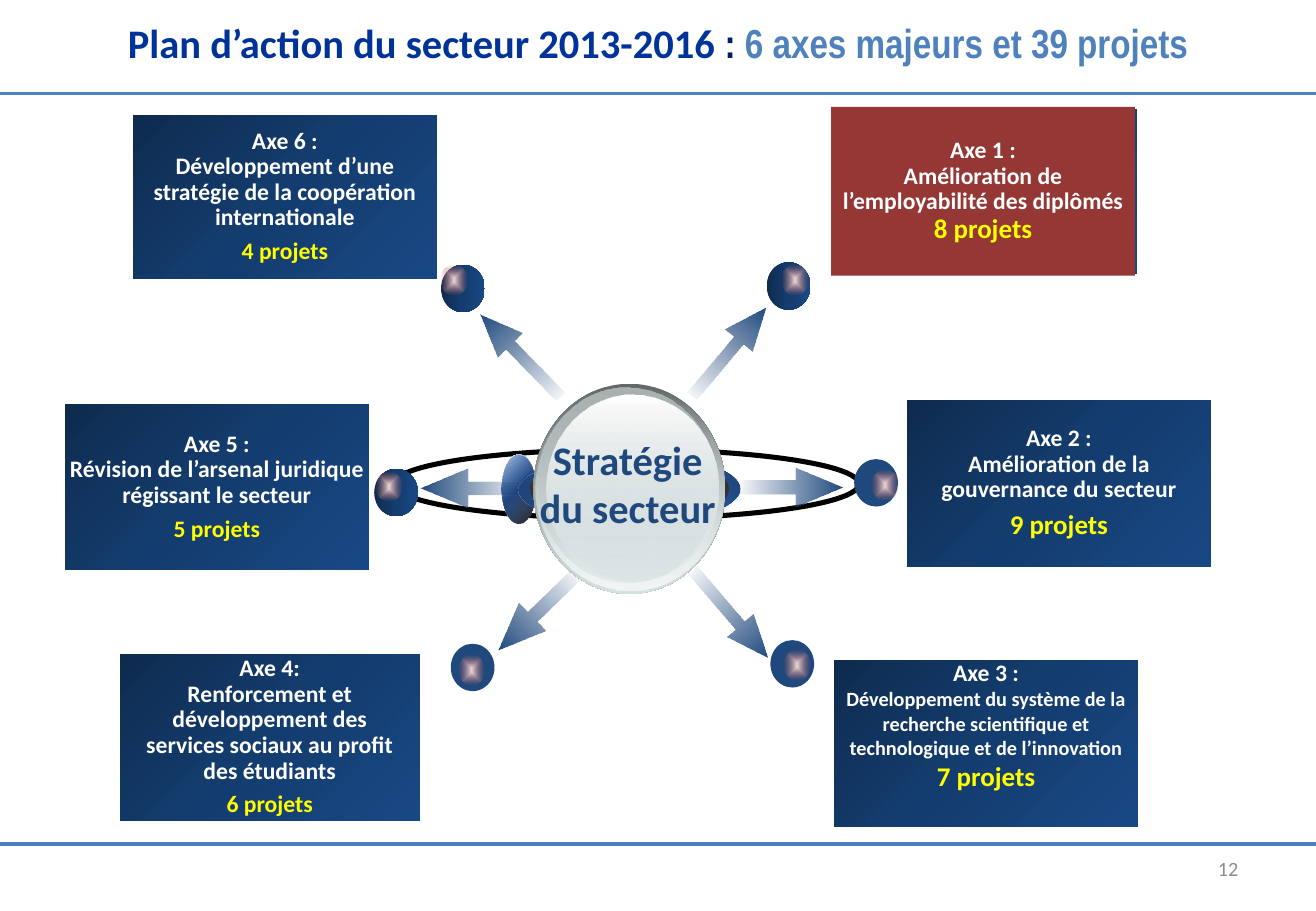
from lxml import etree
from pptx import Presentation
from pptx.dml.color import RGBColor
from pptx.enum import shapes, text
from pptx.oxml.ns import qn
from pptx.util import Inches, Pt

WHITE = RGBColor(0xFF, 0xFF, 0xFF)
BLACK = RGBColor(0, 0, 0)
YELLOW = RGBColor(0xFF, 0xFF, 0)
RED = RGBColor(0x95, 0x37, 0x35)
BLUE = RGBColor(0x4F, 0x81, 0xBD)
ROYAL = RGBColor(0, 0x33, 0x99)
NAVY = RGBColor(0, 0x20, 0x60)
INK = RGBColor(0x1F, 0x49, 0x7D)
FADE = RGBColor(0x1D, 0x45, 0x77)
DEEP = RGBColor(0x0E, 0x2B, 0x4E)
MID = RGBColor(0x14, 0x3D, 0x6F)
LIGHT = RGBColor(0x18, 0x48, 0x84)
SHINE = RGBColor(0xEC, 0xD8, 0xD8)
ROSE = RGBColor(0xC0, 0x50, 0x4D)
SKY = RGBColor(0x30, 0x67, 0xB8)
DUSK = RGBColor(0x1A, 0x38, 0x64)
STEEL = RGBColor(0x1F, 0x41, 0x75)
COAL = RGBColor(0x33, 0x33, 0x33)
SLATE = RGBColor(0x63, 0x68, 0x69)
MIST = RGBColor(0xD6, 0xE1, 0xE2)
PALE = RGBColor(0xF1, 0xF5, 0xF5)
ASH = RGBColor(0xAA, 0xB2, 0xB3)
GREY = RGBColor(0x8C, 0x8C, 0x8C)

# Gradient stops: position, colour, opacity
PANEL = [(0, DEEP, 100), (50, MID, 100), (100, LIGHT, 100)]
GLOW = [(0, SHINE, 100), (100, ROSE, 0)]
TAIL = [(0, FADE, 0), (100, INK, 100)]

RECT, OVAL, ARROW = (shapes.MSO_SHAPE.RECTANGLE, shapes.MSO_SHAPE.OVAL,
                     shapes.MSO_SHAPE.RIGHT_ARROW)
MIDDLE, TOP = text.MSO_ANCHOR.MIDDLE, text.MSO_ANCHOR.TOP
CENTER, RIGHT = text.PP_ALIGN.CENTER, text.PP_ALIGN.RIGHT

# Position, size, lines, size of the count, margin, anchor
AXES = [
    (6.84, 0.88, 2.5, 1.39, ["Axe 1 :", "Amélioration de l’employabilité des diplômés",
                             "8 projets"], 16, 0.01, MIDDLE),
    (7.45, 3.28, 2.53, 1.4, ["Axe 2 :", "Amélioration de la gouvernance du secteur",
                             "9 projets"], 16, 0.01, MIDDLE),
    (6.85, 5.42, 2.53, 1.4, ["Axe 3 :", "Développement du système de la recherche "
                             "scientifique et technologique et de l’innovation",
                             "7 projets"], 16, 0.08, TOP),
    (0.97, 5.37, 2.5, 1.4, ["Axe 4:", "Renforcement et développement des services "
                            "sociaux au profit des étudiants",
                            "6 projets"], 14, 0.15, MIDDLE),
    (0.52, 3.31, 2.53, 1.4, ["Axe 5 :", "Révision de l’arsenal juridique régissant "
                             "le secteur", "5 projets"], 14, 0.01, MIDDLE),
    (1.08, 0.93, 2.53, 1.38, ["Axe 6 :", "Développement d’une stratégie de la "
                              "coopération internationale", "4 projets"], 14, 0.01, MIDDLE),
]

# Layers of the central globe: box, fill, angle
GLOBE = [
    ((4.13, 3.74, 0.28, 0.57), [(0, WHITE, 100), (50, SKY, 100), (100, WHITE, 100)], 45),
    ((4.13, 3.74, 0.28, 0.57), [(0, SKY, 32), (100, BLACK, 90)], 45),
    ((4.27, 3.74, 1.82, 0.57), [(0, DUSK, 100), (50, SKY, 100), (100, DUSK, 100)], 315),
    ((4.27, 3.75, 1.82, 0.57), [(0, STEEL, 100), (100, SKY, 0)], 45),
    ((4.36, 3.74, 1.64, 0.57), COAL, 0),
    ((4.39, 3.16, 1.58, 1.73), [(0, SLATE, 100), (100, MIST, 100)], 90),
    ((4.41, 3.17, 1.55, 1.69), [(0, MIST, 0), (100, PALE, 100)], 90),
    ((4.42, 3.19, 1.48, 1.61), [(0, ASH, 100), (100, MIST, 48)], 90),
    ((4.5, 3.25, 1.41, 1.54), [(0, WHITE, 100), (100, MIST, 38)], 90),
]

# Box and rotation
ARROWS = [
    ((3.46, 3.86, 0.87, 0.32), 180), ((6.06, 3.85, 0.87, 0.32), 0),
    ((5.53, 2.75, 0.94, 0.29), 309.6), ((3.81, 2.78, 0.94, 0.29), 225.5),
    ((5.54, 4.91, 0.94, 0.29), 49), ((3.98, 4.88, 0.87, 0.32), 135.7),
]

# Ball corner, fill, offset of its highlight
BALLS = [
    (6.31, 2.16, PANEL, 0.12, 0.02), (3.63, 2.18, PANEL, 0, 0),
    (3.08, 3.86, PANEL, 0.01, 0.02), (7.03, 3.78, INK, 0.14, 0.09),
    (6.34, 5.27, INK, 0.11, 0.08), (3.71, 5.3, INK, 0.06, 0.09),
]


def blend(shape, stops, angle):
    """Fill with a gradient; an angle of None runs it from the centre."""
    shape.fill.gradient()
    grad = shape._element.spPr.find(qn("a:gradFill"))
    grad.clear()
    grad.set("rotWithShape", "1")
    group = etree.SubElement(grad, qn("a:gsLst"))
    for pos, color, alpha in stops:
        stop = etree.SubElement(group, qn("a:gs"), pos=str(pos * 1000))
        tint = etree.SubElement(stop, qn("a:srgbClr"), val=str(color))
        if alpha < 100:
            etree.SubElement(tint, qn("a:alpha"), val=str(alpha * 1000))
    if angle is None:
        way = etree.SubElement(grad, qn("a:path"), path="shape")
        etree.SubElement(way, qn("a:fillToRect"), l="50000", t="50000",
                         r="50000", b="50000")
    else:
        etree.SubElement(grad, qn("a:lin"), ang=str(angle * 60000), scaled="0")


def draw(slide, kind, box, fill=None, angle=0, line=None, width=2):
    shape = slide.shapes.add_shape(kind, *map(Inches, box))
    shape.shadow.inherit = False
    if fill is None:
        shape.fill.background()
    elif isinstance(fill, list):
        blend(shape, fill, angle)
    else:
        shape.fill.solid()
        shape.fill.fore_color.rgb = fill
    if line is None:
        shape.line.fill.background()
    else:
        shape.line.color.rgb = line
        shape.line.width = Pt(width)
    return shape


def style(font, size, color, bold=True, name="Calibri"):
    font.name, font.size, font.bold = name, Pt(size), bold
    font.color.rgb = color


def write(frame, lines, align=CENTER):
    """Put one paragraph per (words, size, colour, bold)."""
    frame.word_wrap = True
    for i, (words, *look) in enumerate(lines):
        para = frame.add_paragraph() if i else frame.paragraphs[0]
        para.text, para.alignment = words, align
        style(para.font, *look)


def label(slide, box, lines, align=CENTER, anchor=TOP):
    frame = slide.shapes.add_textbox(*map(Inches, box)).text_frame
    frame.vertical_anchor = anchor
    write(frame, lines, align)


def rule(slide, y):
    line = slide.shapes.add_connector(shapes.MSO_CONNECTOR.STRAIGHT, 0, Inches(y),
                                      Inches(10.83), Inches(y))
    line.line.color.rgb = BLUE
    line.line.width = Pt(2.25)
    etree.SubElement(line._element.spPr, qn("a:effectLst"))


def head(slide):
    title = slide.shapes.title
    title.left, title.top, title.width, title.height = map(Inches, (0, 0.15, 10.83, 0.45))
    frame = title.text_frame
    frame.auto_size = text.MSO_AUTO_SIZE.NONE
    frame.vertical_anchor = MIDDLE
    para = frame.paragraphs[0]
    para.alignment, para.line_spacing = CENTER, Pt(25)
    for words, color, name in [("Plan d’action du secteur 2013-2016 ", ROYAL, "Calibri"),
                               (": ", NAVY, "Arial Narrow"),
                               ("6 axes majeurs et 39 projets", BLUE, "Arial Narrow")]:
        run = para.add_run()
        run.text = words
        style(run.font, 24, color, name=name)


def axis(slide, x, y, w, h, lines, size, margin, anchor):
    first, low = lines[0] == "Axe 1 :", anchor == TOP
    if first:
        draw(slide, RECT, (x, y, 2.53, h), PANEL, 45, WHITE)
        card = draw(slide, RECT, (x, y, w, h), RED)
    else:
        card = draw(slide, RECT, (x, y, w, h), PANEL, 45, WHITE)
    frame = card.text_frame
    frame.margin_left = frame.margin_right = Inches(margin)
    frame.margin_top = frame.margin_bottom = Inches(0 if low else 0.01)
    frame.vertical_anchor = anchor
    sizes = (14, 12 if low else 14, size)
    write(frame, [(words, pts, color, True) for words, pts, color
                  in zip(lines, sizes, (WHITE, WHITE, YELLOW))])
    if not low:
        for para in frame.paragraphs:
            para.line_spacing = 0.9
        for para in frame.paragraphs[2 if first else 1:]:
            para.space_after = Pt(5)


def main():
    deck = Presentation()
    deck.slide_width, deck.slide_height = Inches(10.83), Inches(7.5)
    slide = deck.slides.add_slide(deck.slide_layouts[5])

    # Title and rules
    head(slide)
    for y in (0.77, 6.95):
        rule(slide, y)

    # Six axes
    for item in AXES:
        axis(slide, *item)

    # Orbit, globe and arrows
    draw(slide, OVAL, (3.24, 3.7, 3.83, 0.57), line=BLACK, width=3)
    for box, fill, angle in GLOBE:
        draw(slide, OVAL, box, fill, angle)
    for box, turn in ARROWS:
        arrow = draw(slide, ARROW, box, TAIL)
        arrow.rotation = turn
        arrow.adjustments[0], arrow.adjustments[1] = 0.35, 1.21
    label(slide, (2.87, 3.53, 4.59, 0.91),
          [(words, 24, INK, True) for words in ("Stratégie", "du secteur")])

    # Balls with highlights
    for x, y, fill, dx, dy in BALLS:
        draw(slide, OVAL, (x, y, 0.36, 0.39), fill)
        draw(slide, OVAL, (x + dx, y + dy, 0.22, 0.25), GLOW, None)

    # Page number
    label(slide, (7.76, 6.95, 2.53, 0.4), [("12", 12, GREY, False)], RIGHT, MIDDLE)
    deck.save("out.pptx")


if __name__ == "__main__":
    main()
